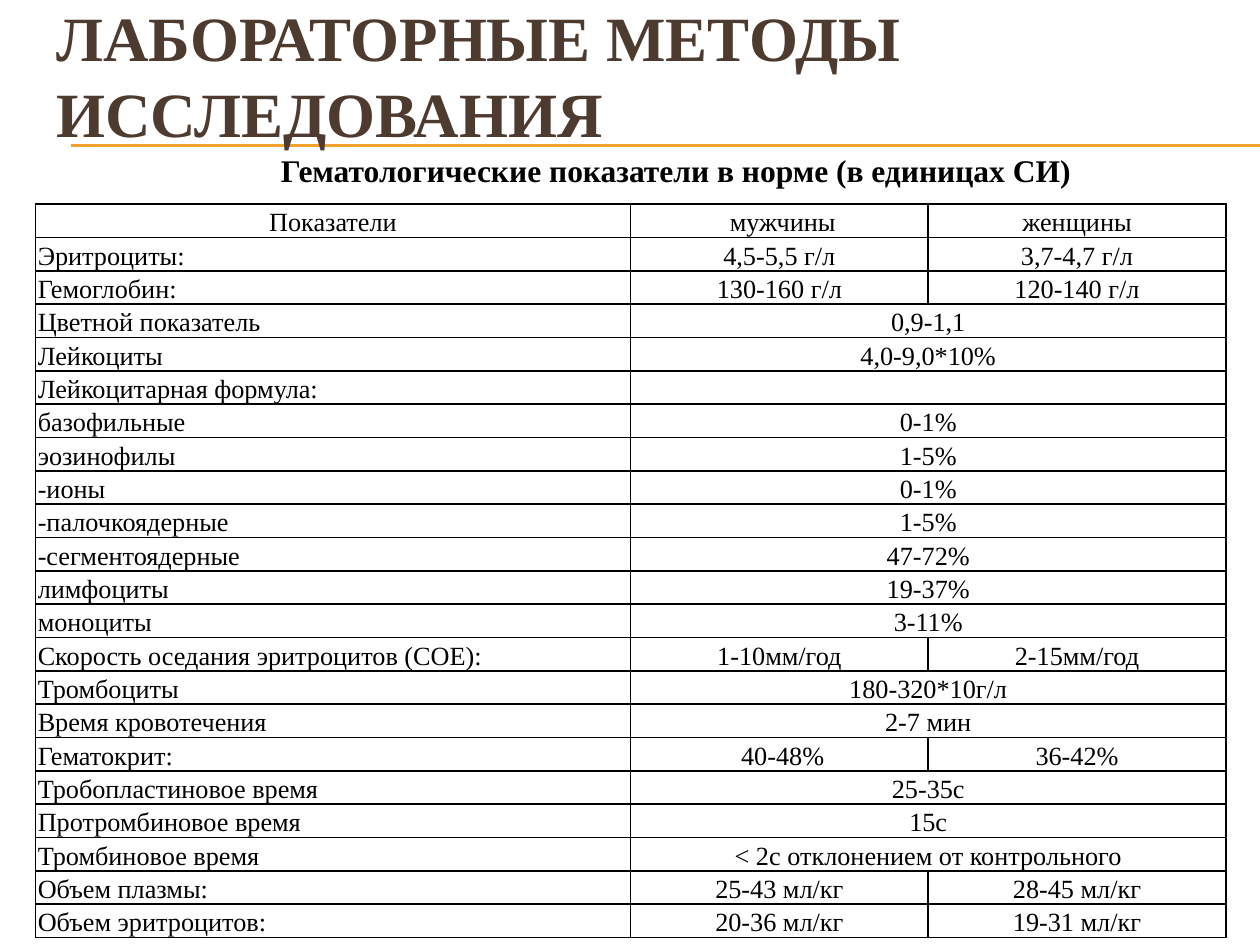
from lxml.etree import SubElement
from pptx import Presentation
from pptx.dml.color import RGBColor
from pptx.enum.shapes import MSO_CONNECTOR
from pptx.enum.text import MSO_ANCHOR, MSO_AUTO_SIZE, PP_ALIGN
from pptx.oxml.ns import qn
from pptx.util import Inches, Pt

BLACK = RGBColor(0x00, 0x00, 0x00)
BROWN = RGBColor(0x4E, 0x3B, 0x30)
AMBER = RGBColor(0xF0, 0xA2, 0x2E)
FONT = "Times New Roman"
TABLE_WIDTH, TABLE_HEIGHT = 9.45, 5.82
COLUMN_SHARES = (0.5, 0.25, 0.25)
ROWS = [
    ("Показатели", " мужчины", "женщины"),
    ("Эритроциты:", "4,5-5,5 г/л", "3,7-4,7 г/л"),
    ("Гемоглобин:", "130-160 г/л", "120-140 г/л"),
    ("Цветной показатель", "0,9-1,1"),
    ("Лейкоциты", "4,0-9,0*10%"),
    ("Лейкоцитарная формула:", ""),
    ("базофильные", "0-1%"),
    ("эозинофилы", "1-5%"),
    ("-ионы", "0-1%"),
    ("-палочкоядерные", "1-5%"),
    ("-сегментоядерные", "47-72%"),
    ("лимфоциты", "19-37%"),
    ("моноциты", "3-11%"),
    ("Скорость оседания эритроцитов (СОЕ):", "1-10мм/год", "2-15мм/год"),
    ("Тромбоциты", "180-320*10г/л"),
    ("Время кровотечения", "2-7 мин"),
    ("Гематокрит:", " 40-48%", "36-42%"),
    ("Тробопластиновое время", "25-35с"),
    ("Протромбиновое время", "15с"),
    ("Тромбиновое время", "< 2с отклонением от контрольного"),
    ("Объем плазмы:", "25-43 мл/кг", "28-45 мл/кг"),
    ("Объем эритроцитов:", "20-36 мл/кг", "19-31 мл/кг"),
]


def write_text(frame, text, size=15, color=BLACK, bold=False,
               align=PP_ALIGN.LEFT, spacing=None, indent=0):
    """Write one formatted paragraph into a text frame."""
    paragraph = frame.paragraphs[0]
    paragraph.alignment = align
    paragraph.line_spacing = spacing
    if indent:
        paragraph._p.get_or_add_pPr().set("indent", str(Inches(indent)))
    if not text:
        SubElement(paragraph._p, qn("a:endParaRPr"), sz=str(size * 100))
        return
    run = paragraph.add_run()
    run.text = text
    run.font.name = FONT
    run.font.size = Pt(size)
    run.font.bold = bold
    run.font.color.rgb = color


def add_text_box(slide, text, left, top, width, height, wrap=True, **text_format):
    """Add a vertically centred text box."""
    box = slide.shapes.add_textbox(*map(Inches, (left, top, width, height)))
    frame = box.text_frame
    frame.word_wrap = wrap
    frame.auto_size = MSO_AUTO_SIZE.NONE if wrap else MSO_AUTO_SIZE.SHAPE_TO_FIT_TEXT
    frame.vertical_anchor = MSO_ANCHOR.MIDDLE
    write_text(frame, text, **text_format)


def add_rule(slide, left, right, top):
    """Add a thin horizontal line without a shadow."""
    rule = slide.shapes.add_connector(
        MSO_CONNECTOR.STRAIGHT, Inches(left), Inches(top), Inches(right), Inches(top))
    rule.line.color.rgb = AMBER
    rule.line.width = Pt(0.75)
    SubElement(rule._element.spPr, qn("a:effectLst"))


def style_cell(cell):
    """Clear the fill, tighten the margins and draw black borders."""
    cell.margin_left = cell.margin_right = Inches(0.02)
    cell.margin_top = cell.margin_bottom = 0
    properties = cell._tc.get_or_add_tcPr()
    for side in ("lnL", "lnR", "lnT", "lnB"):
        border = SubElement(properties, qn(f"a:{side}"), w=str(Pt(1)))
        fill = SubElement(border, qn("a:solidFill"))
        SubElement(fill, qn("a:srgbClr"), val=str(BLACK))
    cell.fill.background()


def add_blood_table(slide, left, top):
    """Add the table of norms, merging values shared by both sexes."""
    table = slide.shapes.add_table(
        len(ROWS), len(COLUMN_SHARES), Inches(left), Inches(top),
        Inches(TABLE_WIDTH), Inches(TABLE_HEIGHT)).table
    table.first_row = table.horz_banding = False
    for column, share in zip(table.columns, COLUMN_SHARES):
        column.width = Inches(TABLE_WIDTH * share)
    for row_index, values in enumerate(ROWS):
        table.rows[row_index].height = Inches(TABLE_HEIGHT / len(ROWS))
        for column_index in range(len(COLUMN_SHARES)):
            style_cell(table.cell(row_index, column_index))
        if len(values) == 2:
            table.cell(row_index, 1).merge(table.cell(row_index, 2))
        for column_index, value in enumerate(values):
            cell = table.cell(row_index, column_index)
            is_label = column_index == 0
            cell.vertical_anchor = MSO_ANCHOR.TOP if is_label else MSO_ANCHOR.MIDDLE
            align = PP_ALIGN.JUSTIFY if is_label and row_index else PP_ALIGN.CENTER
            write_text(cell.text_frame, value, align=align, spacing=1.15)


def main():
    """Build and save the slide."""
    presentation = Presentation()
    presentation.slide_width = Inches(10)
    presentation.slide_height = Inches(7.5)
    slide = presentation.slides.add_slide(presentation.slide_layouts[6])
    for top in (1.15, 1.16):
        add_rule(slide, 0.56, 10, top)
    add_text_box(slide, "ЛАБОРАТОРНЫЕ МЕТОДЫ ИССЛЕДОВАНИЯ", 0.35, 0.13, 9.5, 0.92,
                 size=36, color=BROWN, bold=True)
    add_blood_table(slide, 0.28, 1.62)
    add_text_box(slide, "Гематологические показатели в норме (в единицах СИ)",
                 1.6, 1.15, 7.04, 0.4, wrap=False, size=18, bold=True,
                 align=PP_ALIGN.CENTER, indent=0.49)
    presentation.save("out.pptx")


if __name__ == "__main__":
    main()
